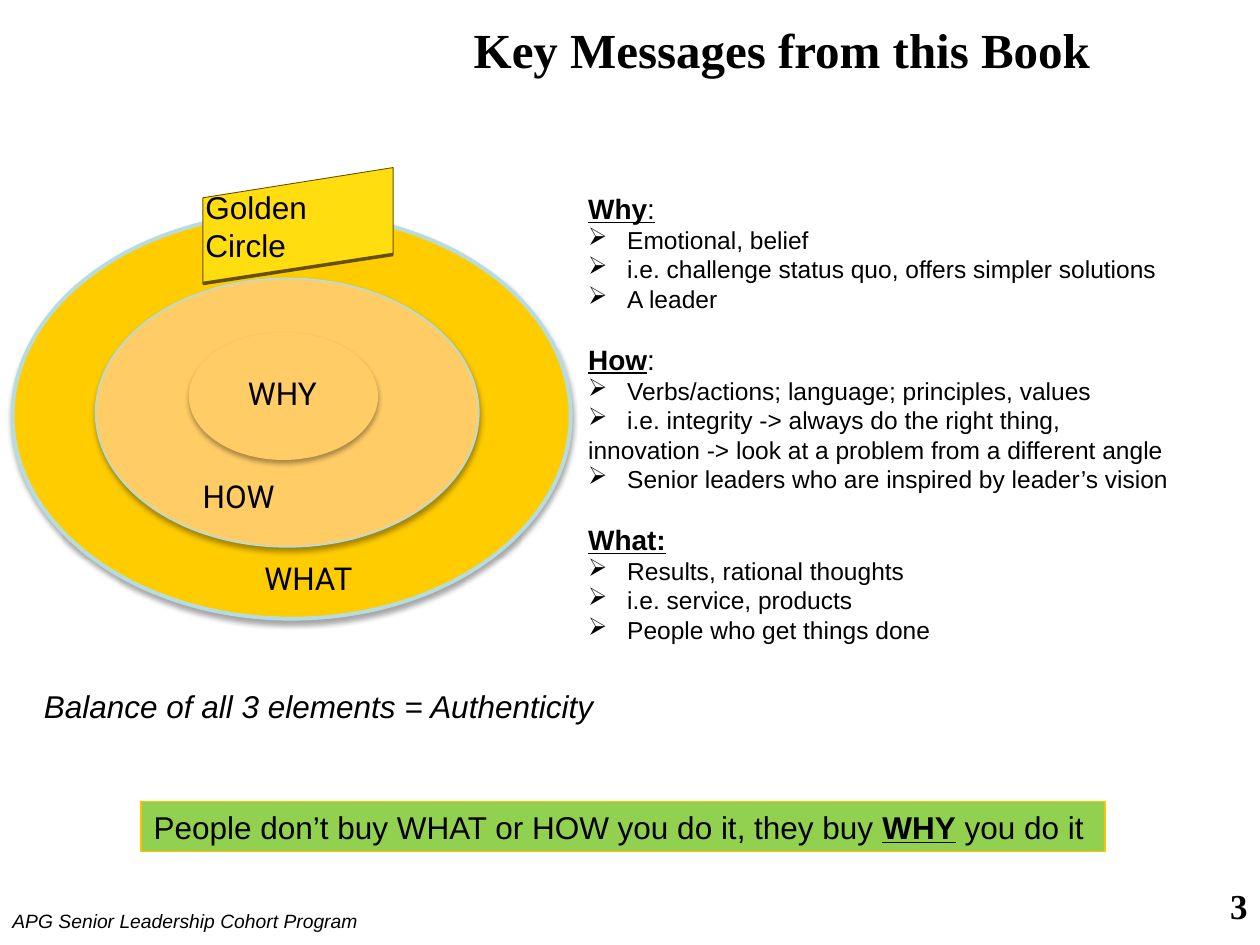
from lxml import etree
from pptx import Presentation
from pptx import util as u
from pptx.dml.color import RGBColor
from pptx.enum import shapes, text
from pptx.oxml import ns

BLACK = RGBColor(0x00, 0x00, 0x00)
GOLD = RGBColor(0xFF, 0xCC, 0x00)
BANNER = RGBColor(0xFF, 0xDD, 0x0F)
BANNER_EDGE = RGBColor(0x66, 0x50, 0x00)
PEACH = RGBColor(0xFF, 0xCC, 0x66)
PALE_BLUE = RGBColor(0xB6, 0xDC, 0xDF)
GREEN = RGBColor(0x92, 0xD0, 0x50)
ORANGE = RGBColor(0xFF, 0xC0, 0x00)

SECTIONS = [
    ([("Why", True, True), (":", False, True)],
     ["Emotional, belief",
      "i.e. challenge status quo, offers simpler solutions",
      "A leader"]),
    ([("How", True, True), (":", False, False)],
     ["Verbs/actions; language; principles, values",
      "i.e. integrity -> always do the right thing,\vinnovation -> look at a problem from a different angle",
      "Senior leaders who are inspired by leader’s vision"]),
    ([("What:", True, True)],
     ["Results, rational thoughts",
      "i.e. service, products",
      "People who get things done"]),
]


class SlideBuilder:
    sans = "Arial"
    serif = "Times New Roman"
    label_font = "Roboto"

    def __init__(self, slide):
        self.slide = slide

    def style(self, paragraph, size, name=None, bold=False, italic=False):
        font = paragraph.font
        font.name = name or self.sans
        font.size = u.Pt(size)
        font.bold = bold
        font.italic = italic
        font.color.rgb = BLACK

    def add_runs(self, paragraph, runs):
        for words, bold, underline in runs:
            run = paragraph.add_run()
            run.text = words
            run.font.bold = bold
            run.font.underline = underline

    def title(self, words, box):
        title = self.slide.shapes.title
        title.left, title.top, title.width, title.height = map(u.Inches, box)
        title.text_frame.text = words
        title.text_frame.vertical_anchor = text.MSO_ANCHOR.MIDDLE
        paragraph = title.text_frame.paragraphs[0]
        paragraph.alignment = text.PP_ALIGN.CENTER
        self.style(paragraph, 28, self.serif, bold=True)

    def text_frame(self, box, wrap=True):
        frame = self.slide.shapes.add_textbox(*map(u.Inches, box)).text_frame
        frame.word_wrap = wrap
        return frame

    def label(self, words, box, size=18, name=None, bold=False, italic=False,
              align=text.PP_ALIGN.LEFT, wrap=True):
        paragraph = self.text_frame(box, wrap).paragraphs[0]
        paragraph.text = words
        paragraph.alignment = align
        self.style(paragraph, size, name, bold, italic)

    def paint(self, shape, fill, line, width):
        shape.shadow.inherit = False
        shape.fill.solid()
        shape.fill.fore_color.rgb = fill
        shape.line.color.rgb = line
        shape.line.width = u.Pt(width)

    def ellipse(self, box, fill, line, width):
        shape = self.slide.shapes.add_shape(shapes.MSO_SHAPE.OVAL, *map(u.Inches, box))
        self.paint(shape, fill, line, width)
        effects = shape._element.spPr.find(ns.qn("a:effectLst"))
        shadow = etree.SubElement(effects, ns.qn("a:outerShdw"), blurRad=str(u.Pt(3.1)),
                                  dist=str(u.Pt(1.8)), dir="5400000", rotWithShape="0")
        color = etree.SubElement(shadow, ns.qn("a:srgbClr"), val=str(BLACK))
        etree.SubElement(color, ns.qn("a:alpha"), val="35000")

    def banner(self, words, corners):
        points = [(u.Inches(x), u.Inches(y)) for x, y in corners]
        builder = self.slide.shapes.build_freeform(*points[0])
        builder.add_line_segments(points[1:], close=True)
        shape = builder.convert_to_shape()
        self.paint(shape, BANNER, BANNER_EDGE, 0.5)
        frame = shape.text_frame
        frame.word_wrap = True
        frame.vertical_anchor = text.MSO_ANCHOR.MIDDLE
        frame.margin_left = u.Inches(0.02)
        frame.margin_right = u.Inches(0.3)
        frame.margin_top = frame.margin_bottom = 0
        paragraph = frame.paragraphs[0]
        paragraph.text = words
        paragraph.alignment = text.PP_ALIGN.LEFT
        self.style(paragraph, 18)
        self.line(points[3], points[2], BANNER_EDGE, 2)

    def line(self, start, end, color, width):
        connector = self.slide.shapes.add_connector(
            shapes.MSO_CONNECTOR.STRAIGHT, *start, *end)
        connector.line.color.rgb = color
        connector.line.width = u.Pt(width)
        etree.SubElement(connector._element.spPr, ns.qn("a:effectLst"))

    def callout(self, runs, box):
        shape = self.slide.shapes.add_shape(
            shapes.MSO_SHAPE.RECTANGLE, *map(u.Inches, box))
        self.paint(shape, GREEN, ORANGE, 0.75)
        shape.text_frame.word_wrap = False
        paragraph = shape.text_frame.paragraphs[0]
        paragraph.alignment = text.PP_ALIGN.LEFT
        self.add_runs(paragraph, runs)
        self.style(paragraph, 18)

    def sections(self, sections, box):
        frame = self.text_frame(box, wrap=False)
        for index, (heading, bullets) in enumerate(sections):
            paragraph = frame.add_paragraph() if index else frame.paragraphs[0]
            if index:
                paragraph.space_before = u.Pt(16.5)
            self.add_runs(paragraph, heading)
            self.style(paragraph, 16)
            for bullet in bullets:
                first, *rest = bullet.split("\v")
                self.bullet(frame.add_paragraph(), first)
                for continuation in rest:
                    paragraph = frame.add_paragraph()
                    paragraph.text = continuation
                    self.style(paragraph, 14)

    def bullet(self, paragraph, words):
        paragraph.text = words
        properties = paragraph._p.get_or_add_pPr()
        properties.set("marL", str(u.Inches(0.31)))
        properties.set("indent", str(u.Inches(-0.31)))
        etree.SubElement(properties, ns.qn("a:buChar"), char="➢")
        self.style(paragraph, 14)


def main():
    presentation = Presentation()
    presentation.slide_width = u.Inches(10)
    presentation.slide_height = u.Inches(7.5)
    builder = SlideBuilder(presentation.slides.add_slide(presentation.slide_layouts[5]))

    builder.title("Key Messages from this Book", (2.58, 0.08, 7.25, 0.62))
    builder.label("APG Senior Leadership Cohort Program", (0, 7.17, 3.42, 0.29),
                  size=11, italic=True)
    builder.label("3", (7.67, 6.97, 2.33, 0.52), size=20, name=builder.serif,
                  bold=True, align=text.PP_ALIGN.RIGHT)
    builder.callout([("People don’t buy WHAT or HOW you do it, they buy ", False, False),
                     ("WHY", True, True), (" you do it", False, False)],
                    (1.12, 6.36, 7.65, 0.4))

    builder.ellipse((0.1, 1.69, 4.43, 3.22), GOLD, PALE_BLUE, 2.25)
    builder.ellipse((0.76, 2.21, 3.04, 2.13), PEACH, PALE_BLUE, 1)
    builder.ellipse((1.52, 2.66, 1.46, 0.97), PEACH, PEACH, 3)
    builder.sections(SECTIONS, (4.57, 1.47, 4.83, 3.97))
    builder.label("Balance of all 3 elements = Authenticity", (0.25, 5.4, 4.67, 0.4),
                  italic=True, wrap=False)
    builder.banner("Golden Circle", [(1.61, 1.57), (3.12, 1.33), (3.12, 2.02), (1.61, 2.25)])
    for words, left, top in [("WHY", 1.87, 2.92), ("HOW", 1.51, 3.74), ("WHAT", 2, 4.39)]:
        builder.label(words, (left, top, 0.96, 0.4), name=builder.label_font)

    presentation.save("out.pptx")


if __name__ == "__main__":
    main()
